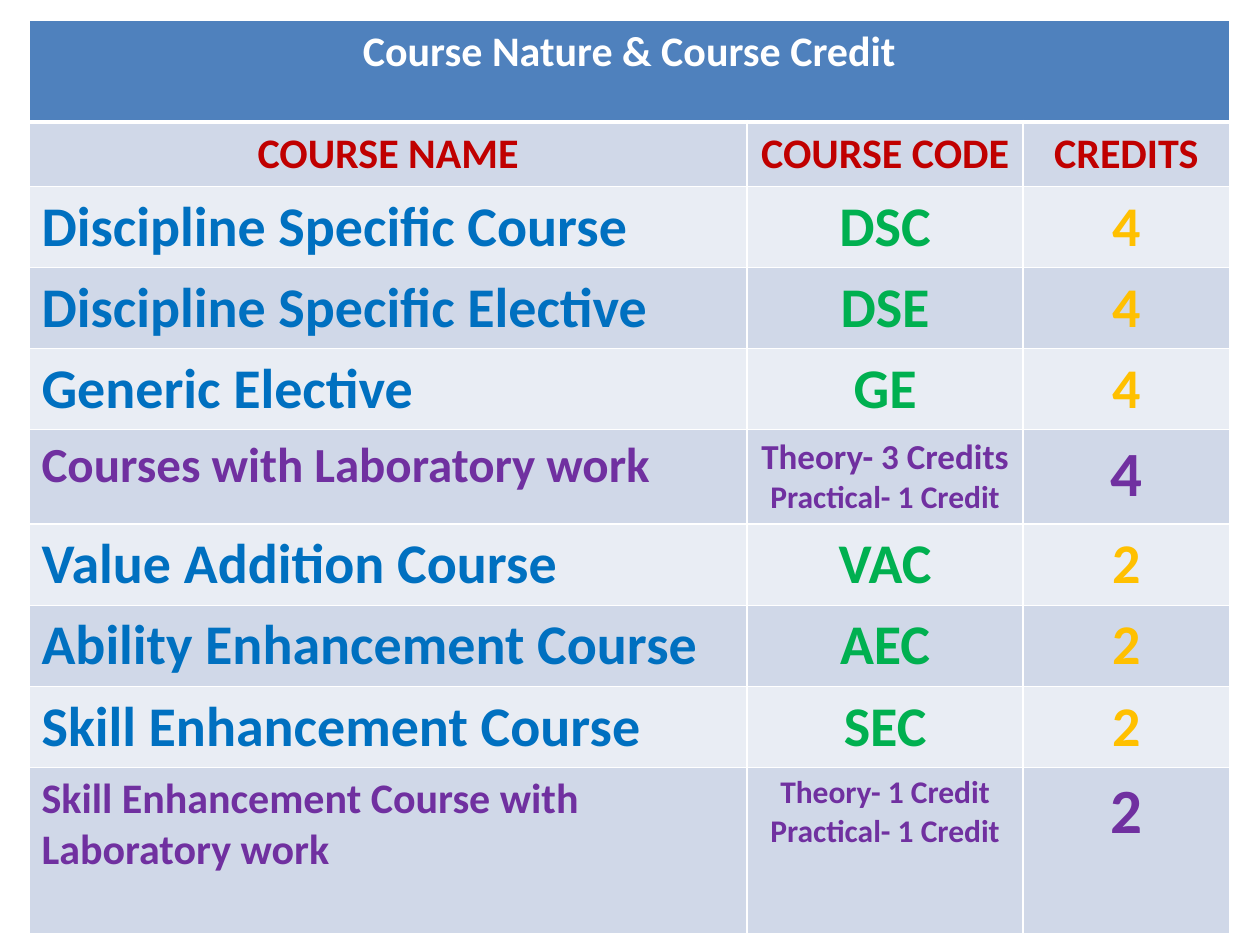
from lxml import etree
from pptx import Presentation, util as u
from pptx.dml.color import RGBColor
from pptx.enum import text
from pptx.oxml import ns

FONT = "Calibri"
WHITE, BLUE_HEAD, BAND_DARK, BAND_LIGHT = "FFFFFF", "4F81BD", "D0D8E8", "E9EDF4"
RED, BLUE, GREEN, GOLD, PURPLE = "C00000", "0070C0", "00B050", "FFC000", "7030A0"

COL_WIDTHS = [5.7, 2.19, 1.64]
TITLE_H, HEAD_H, COURSE_H, LAB_H, LAST_H = 0.81, 0.51, 0.64, 0.75, 1.32


def rgb(value):
    return RGBColor.from_string(value)


def set_borders(cell, bottom=1):
    """White lines on all sides; they must precede the fill in tcPr."""
    tcPr = cell._tc.get_or_add_tcPr()
    for i, (side, width) in enumerate([("L", 1), ("R", 1), ("T", 1), ("B", bottom)]):
        ln = etree.Element(ns.qn(f"a:ln{side}"), w=str(u.Pt(width)))
        fill = etree.SubElement(ln, ns.qn("a:solidFill"))
        etree.SubElement(fill, ns.qn("a:srgbClr"), val=WHITE)
        tcPr.insert(i, ln)


def fill_cell(cell, lines, band, centred=True, bottom=1):
    """Each line is (wording, size, colour) and becomes one paragraph."""
    cell.fill.solid()
    cell.fill.fore_color.rgb = rgb(band)
    set_borders(cell, bottom)
    tf = cell.text_frame
    for i, (words, size, colour) in enumerate(lines):
        p = tf.add_paragraph() if i else tf.paragraphs[0]
        p.alignment = text.PP_ALIGN.CENTER if centred else text.PP_ALIGN.LEFT
        r = p.add_run()
        r.text = words
        r.font.name, r.font.size, r.font.bold = FONT, u.Pt(size), True
        r.font.color.rgb = rgb(colour)


def headings(*names):
    return HEAD_H, [[(name, 24, RED)] for name in names]


def course(name, code, credits):
    return COURSE_H, [[(name, 32, BLUE)], [(code, 32, GREEN)], [(credits, 32, GOLD)]]


def lab_course(height, name, size, split, credits):
    return height, [[(name, size, PURPLE)],
                    [(words, pt, PURPLE) for words, pt in split],
                    [(credits, 36, PURPLE)]]


def credit_table(s, left, top, title, rows):
    heights = [TITLE_H] + [height for height, _ in rows]
    frame = s.shapes.add_table(len(heights), len(COL_WIDTHS), u.Inches(left), u.Inches(top),
                               u.Inches(sum(COL_WIDTHS)), u.Inches(sum(heights)))
    table = frame.table
    for col, width in zip(table.columns, COL_WIDTHS):
        col.width = u.Inches(width)
    for row, height in zip(table.rows, heights):
        row.height = u.Inches(height)

    # Title across all columns
    table.cell(0, 0).merge(table.cell(0, len(COL_WIDTHS) - 1))
    for c in range(len(COL_WIDTHS)):
        lines = [(title, 24, WHITE)] if c == 0 else []
        fill_cell(table.cell(0, c), lines, BLUE_HEAD, bottom=3)

    # Banded rows; only course names are left-aligned
    for i, (_, cells) in enumerate(rows, start=1):
        band = BAND_DARK if i % 2 else BAND_LIGHT
        for c, lines in enumerate(cells):
            fill_cell(table.cell(i, c), lines, band, centred=c > 0 or i == 1)


def main():
    prs = Presentation()
    prs.slide_width, prs.slide_height = u.Inches(10), u.Inches(7.5)
    s = prs.slides.add_slide(prs.slide_layouts[6])
    credit_table(s, 0.23, 0.16, "Course Nature & Course Credit", [
        headings("COURSE NAME", "COURSE CODE", "CREDITS"),
        course("Discipline Specific Course", "DSC", "4"),
        course("Discipline Specific Elective", "DSE", "4"),
        course("Generic Elective", "GE", "4"),
        lab_course(LAB_H, "Courses with Laboratory work", 28,
                   [("Theory- 3 Credits", 20), ("Practical- 1 Credit", 18)], "4"),
        course("Value Addition Course", "VAC", "2"),
        course("Ability Enhancement Course", "AEC", "2"),
        course("Skill Enhancement Course", "SEC", "2"),
        lab_course(LAST_H, "Skill Enhancement Course with Laboratory work", 24,
                   [("Theory- 1 Credit", 18), ("Practical- 1 Credit", 18)], "2"),
    ])
    prs.save("out.pptx")


if __name__ == "__main__":
    main()
